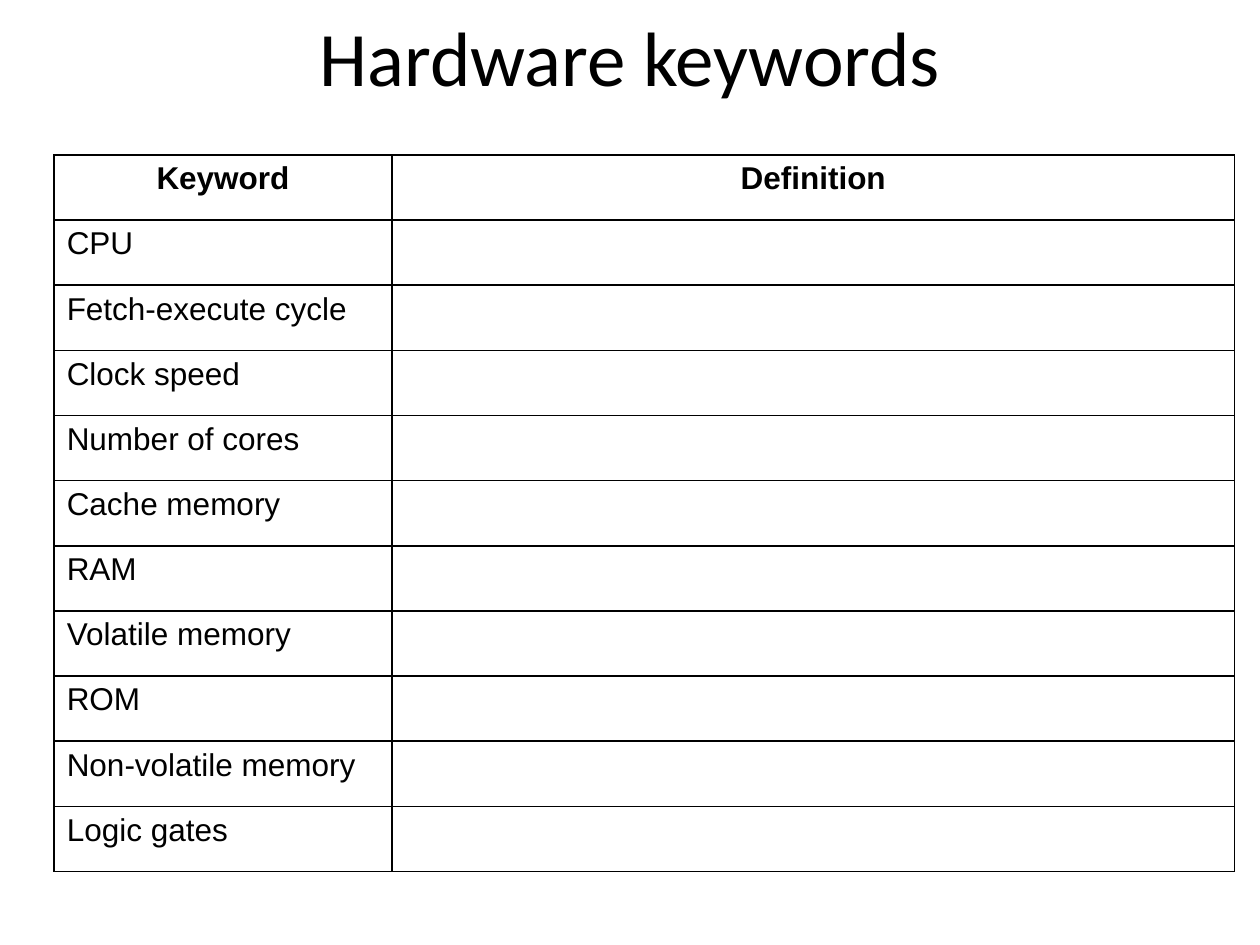
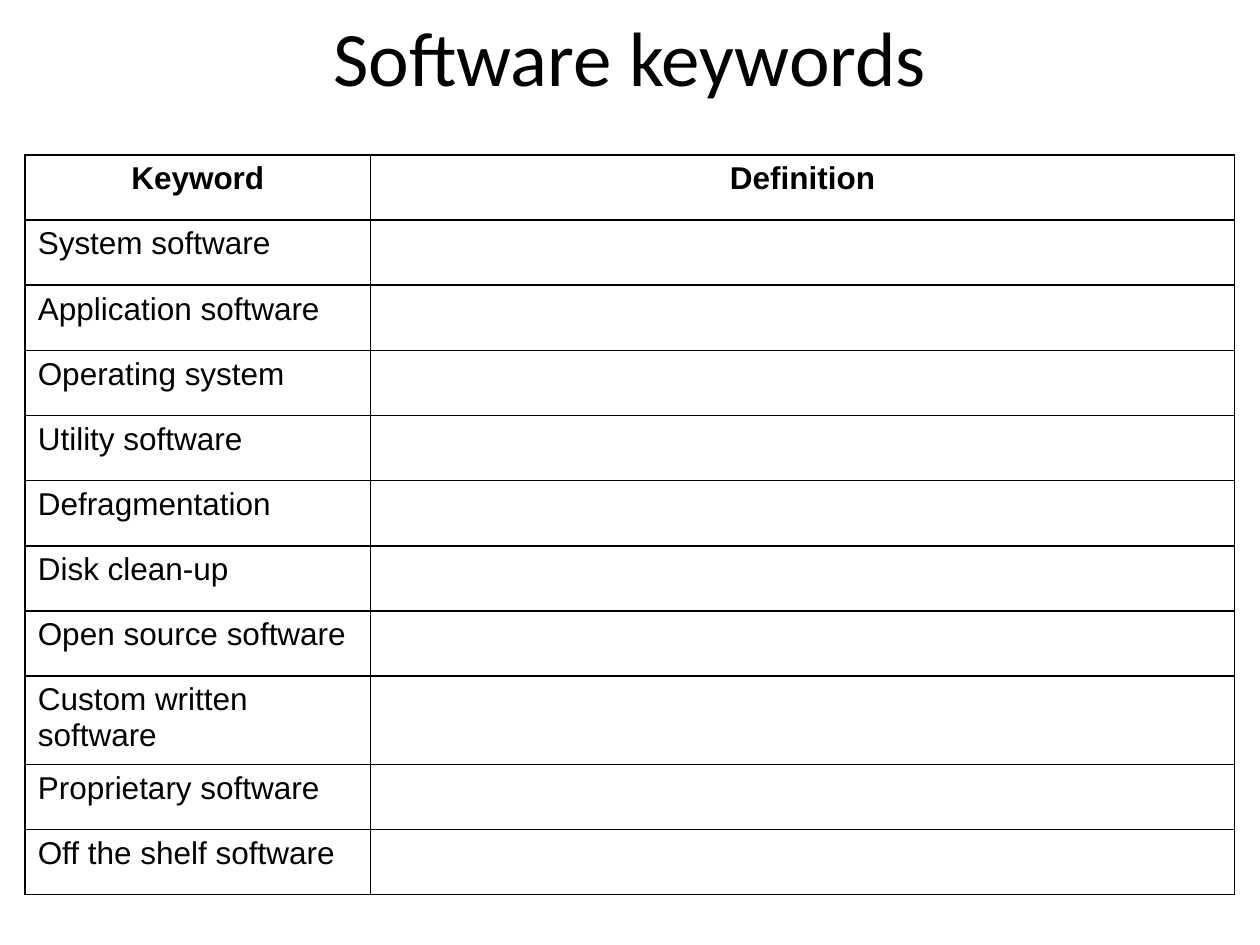
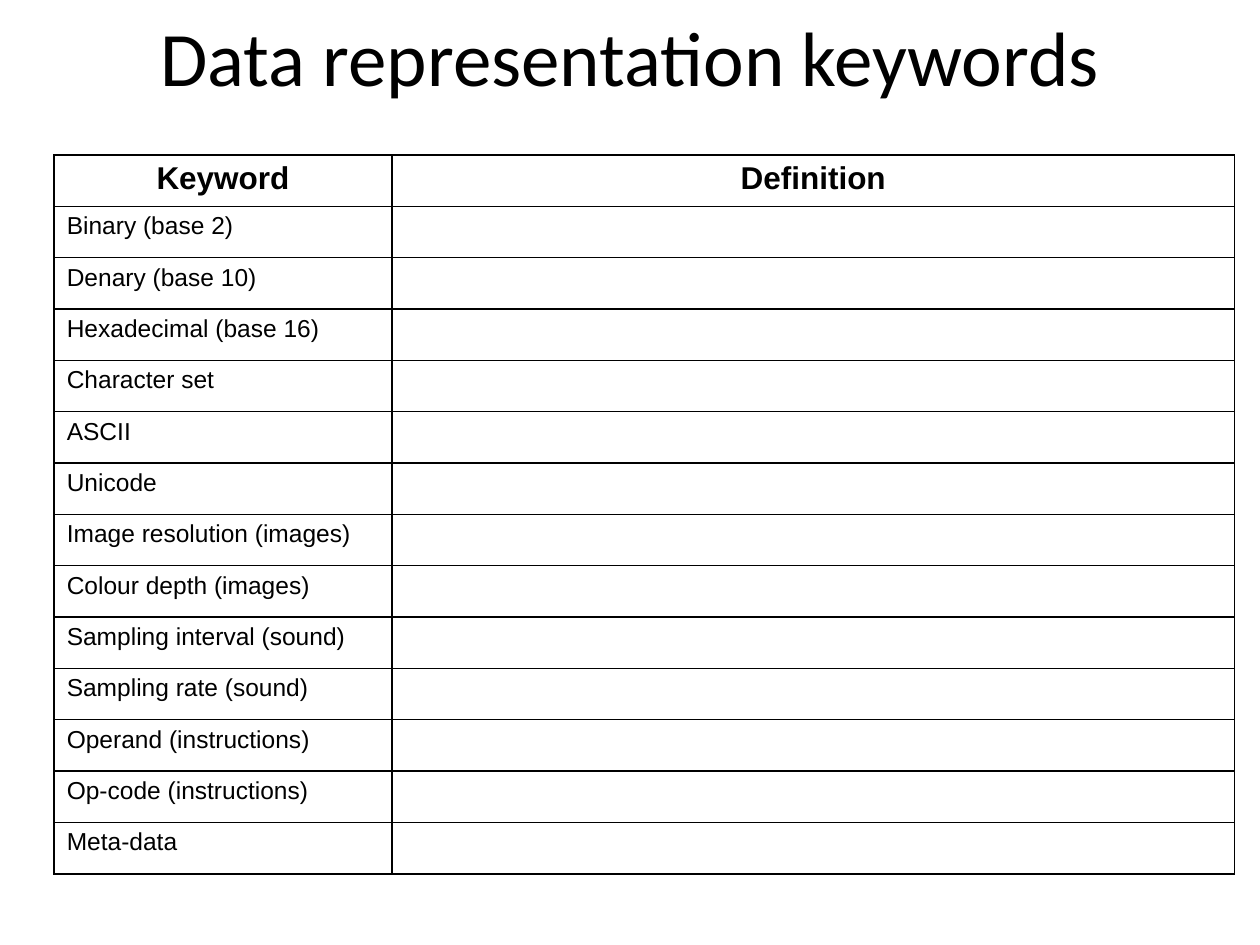
"""Build three keyword tables with blank definitions to fill in."""
from lxml.etree import SubElement
from pptx import Presentation
from pptx.dml.color import RGBColor as RGB
from pptx.enum.text import MSO_ANCHOR as Anchor, PP_ALIGN as Align
from pptx.oxml.ns import qn
from pptx.util import Inches, Pt

COLORS = {"ink": "000000", "page": "FFFFFF"}
HEADS = ("Keyword", "Definition")
HEAD_SIZE = 18
TOP = 1.23
RIGHT = 9.8
SLIDES = [
    {"title": "Hardware keywords", "left": 0.43, "split": 2.68, "height": 5.69, "size": 18,
     "words": ["CPU", "Fetch-execute cycle", "Clock speed", "Number of cores",
               "Cache memory", "RAM", "Volatile memory", "ROM",
               "Non-volatile memory", "Logic gates"]},
    {"title": "Software keywords", "left": 0.2, "split": 2.74, "height": 5.69, "size": 18,
     "words": ["System software", "Application software", "Operating system",
               "Utility software", "Defragmentation", "Disk clean-up",
               "Open source software", "Custom written software",
               "Proprietary software", "Off the shelf software"]},
    {"title": "Data representation keywords", "left": 0.43, "split": 2.68, "height": 5.71, "size": 14,
     "words": ["Binary (base 2)", "Denary (base 10)", "Hexadecimal (base 16)",
               "Character set", "ASCII", "Unicode", "Image resolution (images)",
               "Colour depth (images)", "Sampling interval (sound)",
               "Sampling rate (sound)", "Operand (instructions)",
               "Op-code (instructions)", "Meta-data"]},
]


def style(frame, face, size, bold=False, align=Align.LEFT):
    para = frame.paragraphs[0]
    para.alignment = align
    for run in para.runs:
        font = run.font
        font.name, font.size, font.bold = face, Pt(size), bold
        font.color.rgb = RGB.from_string(COLORS["ink"])


def add_title(slide, text):
    box = slide.shapes.add_textbox(Inches(0.5), Inches(0.05), Inches(9), Inches(0.79))
    frame = box.text_frame
    frame.word_wrap = True
    frame.vertical_anchor = Anchor.MIDDLE
    frame.text = text
    style(frame, "Calibri", 44, align=Align.CENTER)


def add_border(cell):
    props = cell._tc.get_or_add_tcPr()
    for side in ("lnL", "lnR", "lnT", "lnB"):
        line = SubElement(props, qn(f"a:{side}"), w=str(Pt(1)))
        fill = SubElement(line, qn("a:solidFill"))
        SubElement(fill, qn("a:srgbClr"), val=COLORS["ink"])


def add_words(slide, data):
    rows = [HEADS] + [(word, "") for word in data["words"]]
    left, split, height = data["left"], data["split"], data["height"]
    width = RIGHT - left
    table = slide.shapes.add_table(len(rows), len(HEADS), Inches(left), Inches(TOP),
                                   Inches(width), Inches(height)).table
    table.first_row = table.horz_banding = False
    for col, size in zip(table.columns, (split, width - split)):
        col.width = Inches(size)
    for r, row in enumerate(rows):
        table.rows[r].height = Inches(height / len(rows))
        for c, text in enumerate(row):
            cell = table.cell(r, c)
            add_border(cell)
            cell.fill.background()
            cell.text_frame.text = text
            if r == 0:
                style(cell.text_frame, "Arial", HEAD_SIZE, True, Align.CENTER)
            else:
                style(cell.text_frame, "Arial", data["size"])


def main():
    deck = Presentation()
    deck.slide_width, deck.slide_height = Inches(10), Inches(7.5)
    for data in SLIDES:
        slide = deck.slides.add_slide(deck.slide_layouts[6])
        back = slide.background.fill
        back.solid()
        back.fore_color.rgb = RGB.from_string(COLORS["page"])
        add_title(slide, data["title"])
        add_words(slide, data)
    deck.save("out.pptx")


if __name__ == "__main__":
    main()
